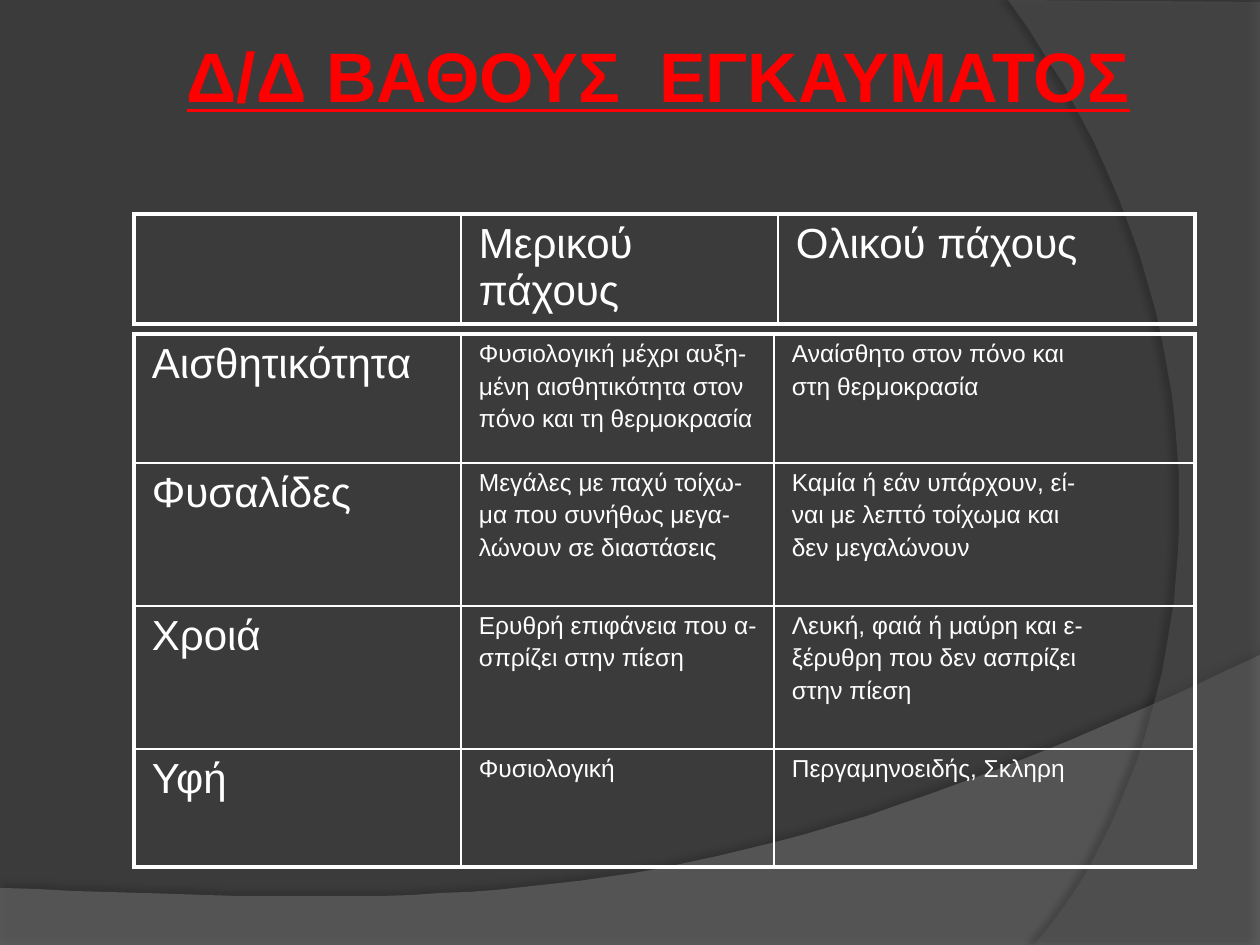
from lxml.etree import SubElement
from pptx import Presentation
from pptx.dml.color import RGBColor
from pptx.enum.text import MSO_ANCHOR, PP_ALIGN
from pptx.oxml import parse_xml
from pptx.oxml.ns import nsdecls, qn
from pptx.util import Inches, Pt

PX = Inches(1) / 126
BACKGROUND = RGBColor(0x3B, 0x3B, 0x3B)
LOWER_WAVE = RGBColor(0x7F, 0x7F, 0x7F)
RIGHT_ARC = RGBColor(0x5E, 0x5E, 0x5E)
RED = RGBColor(0xFF, 0x00, 0x00)
WHITE = RGBColor(0xFF, 0xFF, 0xFF)


def write_text(text_frame, text, size, color, bold=False, underline=False,
               align=PP_ALIGN.LEFT, space_before=0):
    """Write one paragraph for each line of the text."""
    for index, line in enumerate(text.split("\n")):
        paragraph = text_frame.add_paragraph() if index else text_frame.paragraphs[0]
        paragraph.alignment = align
        paragraph.space_before = Pt(space_before)
        run = paragraph.add_run()
        run.text = line
        run.font.name = "Arial"
        run.font.size = Pt(size)
        run.font.bold = bold
        run.font.underline = underline
        run.font.color.rgb = color


def set_borders(cell, widths):
    """Draw the cell's sides; widths gives points for L, R, T and B."""
    properties = cell._tc.get_or_add_tcPr()
    for index, (side, width) in enumerate(widths.items()):
        properties.insert(index, parse_xml(
            f'<a:ln{side} {nsdecls("a")} w="{Pt(width)}"><a:solidFill>'
            f'<a:srgbClr val="{WHITE}"/></a:solidFill></a:ln{side}>'))


presentation = Presentation()
presentation.slide_width = round(1260 * PX)
presentation.slide_height = round(945 * PX)
slide = presentation.slides.add_slide(presentation.slide_layouts[5])
slide.background.fill.solid()
slide.background.fill.fore_color.rgb = BACKGROUND

# Background curves: corners, then a Bezier curve from the last corner.
# Shadow: opacity %, distance in points, direction in degrees.
curves = [
    ([(0, 888), (0, 945), (1260, 945), (1260, 655)],
     [(704, 919), (493, 906), (0, 888)], LOWER_WAVE, 45, (35, 3.5, 270)),
    ([(1260, 2), (1260, 945), (1034, 945)],
     [(1178, 780), (1283, 378), (1008, 0)], RIGHT_ARC, 40, (45, 4, 180)),
]
STEPS = 40
for corners, bezier, color, opacity, shadow in curves:
    points = list(corners[1:])
    control = [corners[-1], *bezier]
    for step in range(1, STEPS + 1):
        t = step / STEPS
        weights = ((1 - t) ** 3, 3 * t * (1 - t) ** 2, 3 * t * t * (1 - t), t ** 3)
        points.append(tuple(sum(weight * point[axis]
                                for weight, point in zip(weights, control))
                            for axis in (0, 1)))
    builder = slide.shapes.build_freeform(*corners[0], scale=PX)
    builder.add_line_segments(points, close=True)
    shape = builder.convert_to_shape()
    shape.fill.solid()
    shape.fill.fore_color.rgb = color
    shape.line.fill.background()
    fill_color = shape.element.xpath("./p:spPr/a:solidFill/a:srgbClr")[0]
    SubElement(fill_color, qn("a:alpha"), val=str(opacity * 1000))
    shape.shadow.inherit = False
    shadow_opacity, distance, direction = shadow
    effects = shape.element.xpath("./p:spPr/a:effectLst")[0]
    effects.append(parse_xml(
        f'<a:outerShdw {nsdecls("a")} blurRad="{Pt(4)}" dist="{Pt(distance)}" '
        f'dir="{direction * 60000}" algn="ctr" rotWithShape="0">'
        f'<a:srgbClr val="000000"><a:alpha val="{shadow_opacity * 1000}"/>'
        f'</a:srgbClr></a:outerShdw>'))

# Title, brought in front of the curves
title = slide.shapes.title
title.element.getparent().append(title.element)
title.left, title.top, title.width, title.height = (
    round(value * PX) for value in (144, 33, 1029, 158))
frame = title.text_frame
frame.word_wrap = True
frame.vertical_anchor = MSO_ANCHOR.TOP
frame.margin_left = frame.margin_right = Inches(0.05)
frame.margin_top = frame.margin_bottom = 0
write_text(frame, "Δ/Δ ΒΑΘΟΥΣ  ΕΓΚΑΥΜΑΤΟΣ", size=40, color=RED, bold=True,
           underline=True, align=PP_ALIGN.CENTER)

# Tables: top, column widths, row heights, cell texts
body_rows = [
    ["Αισθητικότητα",
     "Φυσιολογική μέχρι αυξη-\nμένη αισθητικότητα στον\nπόνο και τη θερμοκρασία",
     "Αναίσθητο στον πόνο και\nστη θερμοκρασία"],
    ["Φυσαλίδες",
     "Μεγάλες με παχύ τοίχω-\nμα που συνήθως μεγα-\nλώνουν σε διαστάσεις",
     "Καμία ή εάν υπάρχουν, εί-\nναι με λεπτό τοίχωμα και\nδεν μεγαλώνουν"],
    ["Χροιά",
     "Ερυθρή επιφάνεια που α-\nσπρίζει στην πίεση",
     "Λευκή, φαιά ή μαύρη και ε-\nξέρυθρη που δεν ασπρίζει\nστην πίεση"],
    ["Υφή", "Φυσιολογική", "Περγαμηνοειδής, Σκληρη"],
]
header_rows = [["", "Μερικού πάχους", "Ολικού πάχους"]]
tables = [
    (334, [327, 313, 421], [129, 143, 143, 118], body_rows),
    (214, [327, 317, 417], [110], header_rows),
]
for top, widths, heights, rows in tables:
    table = slide.shapes.add_table(
        len(rows), len(widths), round(134 * PX), round(top * PX),
        round(sum(widths) * PX), round(sum(heights) * PX)).table
    table.first_row = table.horz_banding = False
    for column, width in zip(table.columns, widths):
        column.width = round(width * PX)
    for row_index, (texts, height) in enumerate(zip(rows, heights)):
        table.rows[row_index].height = round(height * PX)
        for column_index, text in enumerate(texts):
            cell = table.cell(row_index, column_index)
            cell.fill.background()
            cell.margin_left = round(18 * PX)
            outer_sides = {
                "L": column_index == 0,
                "R": column_index == len(widths) - 1,
                "T": row_index == 0,
                "B": row_index == len(rows) - 1,
            }
            set_borders(cell, {side: 2.25 if outer else 1
                               for side, outer in outer_sides.items()})
            if text:
                large = column_index == 0 or rows is header_rows
                size = 24 if large else 14
                write_text(cell.text_frame, text, size=size, color=WHITE,
                           space_before=size * 0.2)

presentation.save("out.pptx")
